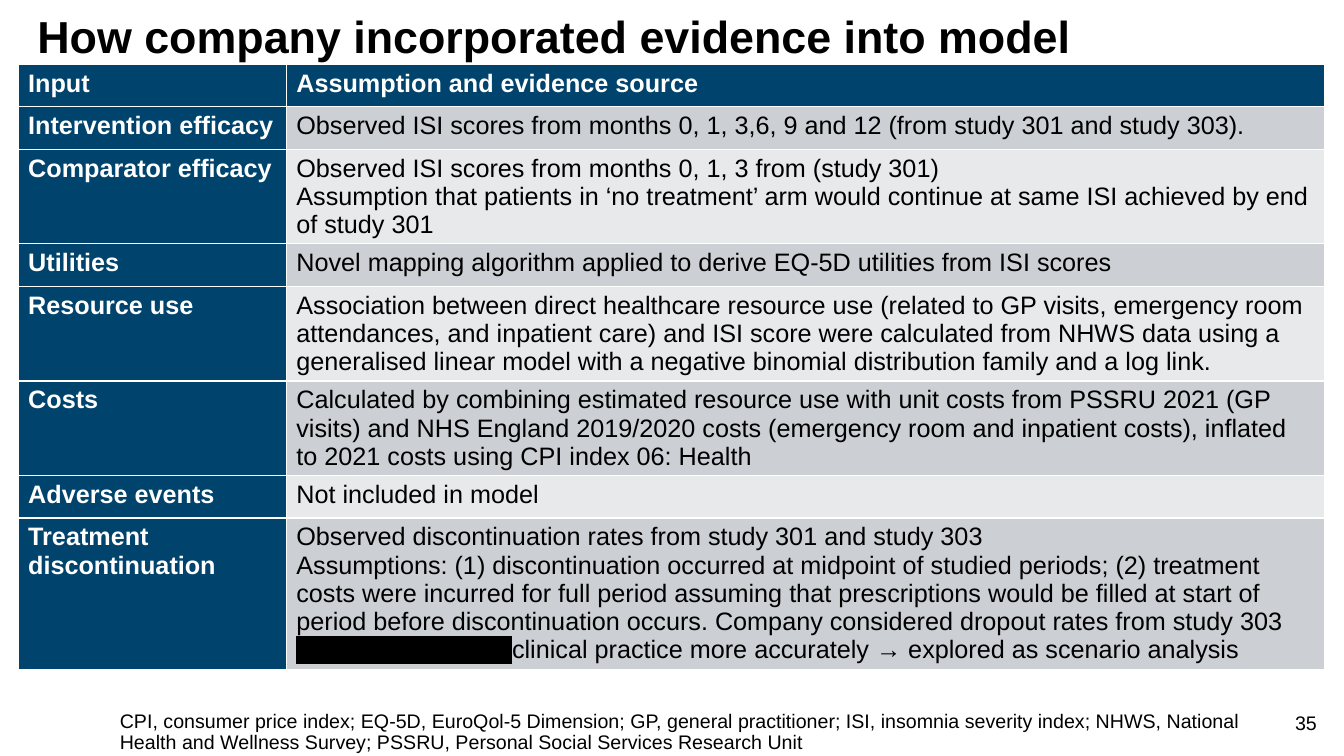
from lxml.etree import SubElement
from pptx import Presentation
from pptx.dml.color import RGBColor
from pptx.enum.text import MSO_ANCHOR, PP_ALIGN
from pptx.oxml.ns import qn
from pptx.util import Inches, Pt

COLOURS = {
    "navy": "00436C",
    "dark_band": "CCCFD4",
    "light_band": "E7E9EB",
    "white": "FFFFFF",
    "black": "000000",
}
REDACTED = "xxxxxxx xxx xxxxxx"
HEADER = ("Input", ["Assumption and evidence source"], 0.42)
INPUTS = [
    ("Intervention efficacy",
     ["Observed ISI scores from months 0, 1, 3,6, 9 and 12 (from study 301 and study 303)."], 0.42),
    ("Comparator efficacy",
     ["Observed ISI scores from months 0, 1, 3 from (study 301)",
      "Assumption that patients in ‘no treatment’ arm would continue at same ISI "
      "achieved by end of study 301"], 0.94),
    ("Utilities",
     ["Novel mapping algorithm applied to derive EQ-5D utilities from ISI scores"], 0.42),
    ("Resource use",
     ["Association between direct healthcare resource use (related to GP visits, emergency room "
      "attendances, and inpatient care) and ISI score were calculated from NHWS data using a "
      "generalised linear model with a negative binomial distribution family and a log link."], 0.94),
    ("Costs",
     ["Calculated by combining estimated resource use with unit costs from PSSRU 2021 (GP visits) "
      "and NHS England 2019/2020 costs (emergency room and inpatient costs), inflated to 2021 "
      "costs using CPI index 06: Health"], 0.94),
    ("Adverse events", ["Not included in model"], 0.42),
    ("Treatment discontinuation",
     ["Observed discontinuation rates from study 301 and study 303",
      "Assumptions: (1) discontinuation occurred at midpoint of studied periods; (2) treatment "
      "costs were incurred for full period assuming that prescriptions would be filled at start "
      "of period before discontinuation occurs. Company considered dropout rates from study 303 "
      f"{REDACTED}clinical practice more accurately → explored as scenario analysis"], 1.5),
]
ABBREVIATIONS = (
    "CPI, consumer price index; EQ-5D, EuroQol-5 Dimension; GP, general practitioner; "
    "ISI, insomnia severity index; NHWS, National Health and Wellness Survey; "
    "PSSRU, Personal Social Services Research Unit"
)


def colour(name):
    """Return the named colour."""
    return RGBColor.from_string(COLOURS[name])


def style_run(run, size, ink="black", bold=False):
    """Set the font of a run."""
    run.font.name = "Arial"
    run.font.size = Pt(size)
    run.font.bold = bold
    run.font.color.rgb = colour(ink)


def redact(run):
    """Underline a run and black it out with a highlight."""
    run.font.underline = True
    properties = run.font._element
    highlight = SubElement(properties, qn("a:highlight"))
    SubElement(highlight, qn("a:srgbClr"), val=COLOURS["black"])
    properties.find(qn("a:solidFill")).addnext(highlight)


def add_title(slide, text):
    """Place and format the title."""
    title = slide.shapes.title
    title.left, title.top = Inches(0.27), Inches(0.1)
    title.width, title.height = Inches(12.3), Inches(0.65)
    title.text_frame.text = text
    title.text_frame.vertical_anchor = MSO_ANCHOR.TOP
    heading = title.text_frame.paragraphs[0]
    heading.alignment = PP_ALIGN.LEFT
    heading.line_spacing = 0.9
    style_run(heading.runs[0], 32, bold=True)


def add_note(slide, text, left, top, width, align=PP_ALIGN.LEFT, spacing=1.0):
    """Add a small text box at the foot of the slide."""
    box = slide.shapes.add_textbox(Inches(left), Inches(top), Inches(width), Inches(0.4))
    box.text_frame.word_wrap = True
    box.text_frame.text = text
    note = box.text_frame.paragraphs[0]
    note.alignment = align
    note.line_spacing = spacing
    style_run(note.runs[0], 14)


def fill_cell(cell, paragraphs, fill, ink, bold):
    """Fill a table cell, blacking out the redacted words."""
    cell.fill.solid()
    cell.fill.fore_color.rgb = colour(fill)
    frame = cell.text_frame
    for index, text in enumerate(paragraphs):
        paragraph = frame.add_paragraph() if index else frame.paragraphs[0]
        before, hidden, after = text.partition(REDACTED)
        for part in filter(None, (before, hidden, after)):
            run = paragraph.add_run()
            run.text = part
            style_run(run, 18, ink, bold)
            if part == REDACTED:
                redact(run)


def add_evidence_table(slide):
    """Add the table of model inputs and their evidence."""
    rows = [HEADER, *INPUTS]
    height = sum(row[2] for row in rows)
    table = slide.shapes.add_table(
        len(rows), 2, Inches(0.18), Inches(0.64), Inches(12.96), Inches(height)).table
    table.first_col = True
    for column, width in zip(table.columns, (2.66, 10.3)):
        column.width = Inches(width)
    for index, (name, evidence, row_height) in enumerate(rows):
        table.rows[index].height = Inches(row_height)
        fill_cell(table.cell(index, 0), [name], "navy", "white", True)
        if index == 0:
            look = ("navy", "white", True)
        else:
            look = ("dark_band" if index % 2 else "light_band", "black", False)
        fill_cell(table.cell(index, 1), evidence, *look)


def main():
    """Build and save the slide."""
    deck = Presentation()
    deck.slide_width, deck.slide_height = Inches(13.33), Inches(7.5)
    slide = deck.slides.add_slide(deck.slide_layouts[5])
    add_title(slide, "How company incorporated evidence into model")
    add_evidence_table(slide)
    add_note(slide, ABBREVIATIONS, 1.09, 7.01, 11.38, spacing=0.9)
    add_note(slide, "35", 12.65, 7, 0.51, align=PP_ALIGN.RIGHT)
    deck.save("out.pptx")


if __name__ == "__main__":
    main()
